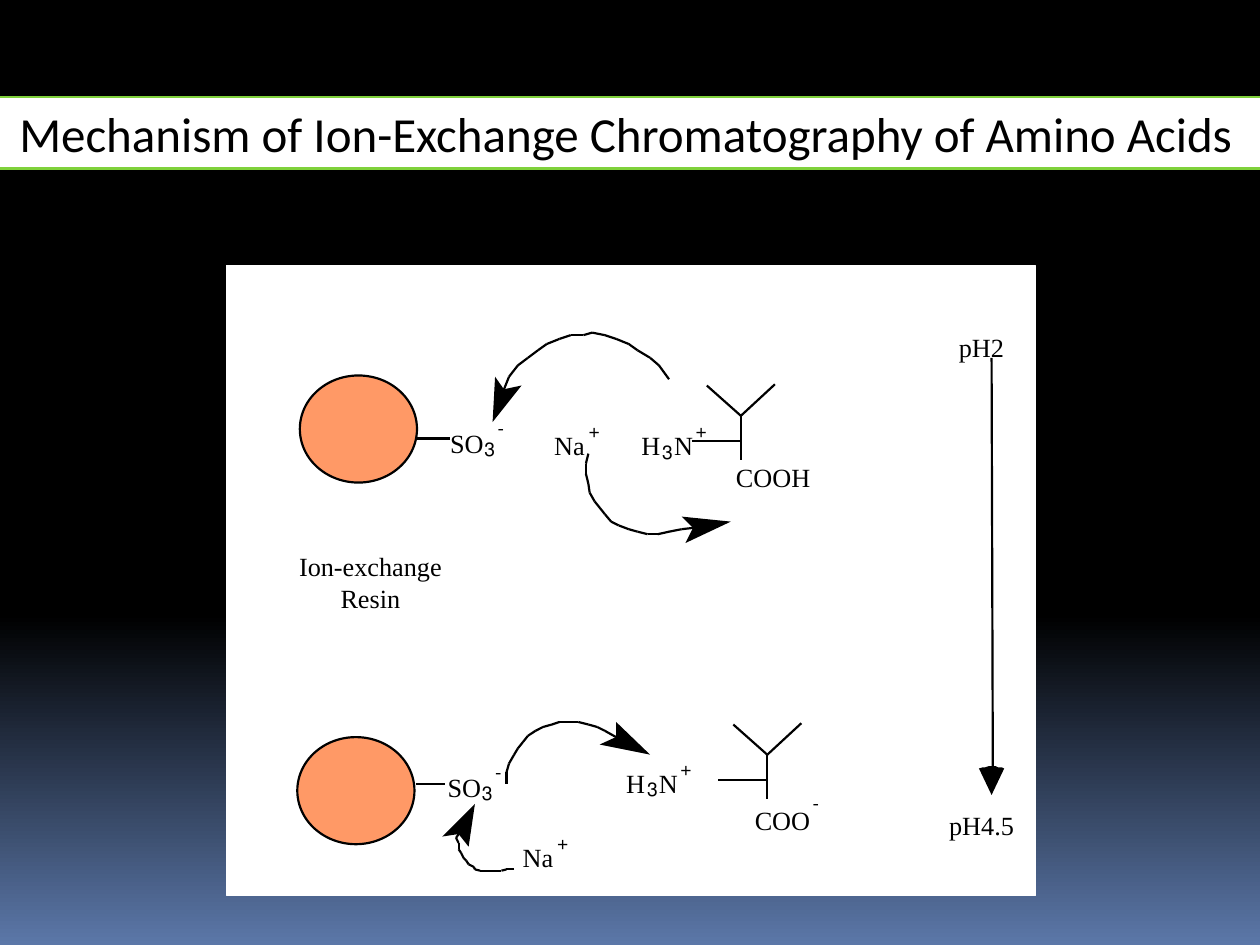
"""Build a slide on ion-exchange chromatography of amino acids."""
from itertools import chain
from lxml.etree import SubElement
from pptx import Presentation
from pptx.dml.color import RGBColor as Rgb
from pptx.enum.shapes import MSO_CONNECTOR as Connector, MSO_SHAPE as Preset
from pptx.enum.text import MSO_ANCHOR as Anchor, MSO_AUTO_SIZE as Fit, PP_ALIGN as Align
from pptx.oxml.ns import qn
from pptx.util import Inches, Pt

THEME = {
    "black": Rgb(0, 0, 0), "white": Rgb(255, 255, 255), "night": Rgb.from_string("5B77A8"),
    "green": Rgb.from_string("7FD13B"), "resin": Rgb.from_string("FF9966"),
    "title": {"name": "Calibri", "size": Pt(28)},
    "label": {"name": "Times New Roman", "size": Pt(15)},
    "script": {"name": "Times New Roman", "size": Pt(11)},
    "stroke": 1.25,
}

TITLE = "Mechanism of Ion-Exchange Chromatography of Amino Acids"
PANEL = (1.8, 2.11, 6.42, 5)
BANNER = (-0.12, 0.77, 10.17, 0.57)
BEADS = [(2.38, 2.98, 0.93, 0.85), (2.36, 5.85, 0.93, 0.85)]

FORMULAS = {
    "sulfonate": [("SO", 0, 0, 0.27), ("3", 0.28, 0.08, 0.08), ("-", 0.38, -0.09, 0.05)],
    "sodium": [("Na", -0.01, 0, 0.26), ("+", 0.27, -0.09, 0.09)],
    "ammonium": [("H", 0, 0, 0.15), ("3", 0.17, 0.08, 0.08), ("N", 0.26, 0, 0.15),
                 ("+", 0.43, -0.09, 0.09)],
    "acid": [("COOH", 0, 0, 0.59)],
    "carboxylate": [("COO", 0, 0, 0.44), ("-", 0.46, -0.1, 0.05)],
}
IONS = [
    ("sulfonate", 3.57, 3.39), ("sodium", 4.4, 3.41), ("ammonium", 5.09, 3.41),
    ("acid", 5.84, 3.66), ("sulfonate", 3.55, 6.12), ("sodium", 4.15, 6.68),
    ("ammonium", 4.97, 6.09), ("carboxylate", 5.99, 6.38),
]
CAPTIONS = [
    ("pH2", 7.61, 2.63, 0.36), ("pH4.5", 7.53, 6.42, 0.52),
    ("Ion-exchange\vResin", 2.37, 4.37, 1.14),
]

RESIN_BONDS = [(3.3, 3.48, 3.57, 3.48), (3.3, 6.22, 3.53, 6.22)]
CARBON_CENTRES = [(5.88, 3.3), (6.09, 5.99)]
CARBON_BONDS = [(0, 0, -0.27, -0.24), (0, 0, 0.27, -0.25), (0, 0, 0, 0.35),
                (-0.39, 0.2, -0.01, 0.2)]
PH_AXIS = (7.87, 2.84, 7.88, 6.2)

CURVES = [
    [(5.31, 3.01), (5.23, 2.9), (5.16, 2.84), (5.06, 2.78), (4.99, 2.73), (4.89, 2.69),
     (4.8, 2.66), (4.7, 2.64), (4.63, 2.66), (4.53, 2.66), (4.44, 2.69), (4.34, 2.73),
     (4.27, 2.78), (4.19, 2.84), (4.11, 2.9), (4.04, 2.99), (4, 3.09)],
    [(4.67, 3.6), (4.65, 3.68), (4.65, 3.76), (4.67, 3.84), (4.68, 3.91), (4.72, 3.98),
     (4.76, 4.03), (4.8, 4.08), (4.85, 4.14), (4.91, 4.17), (4.99, 4.2), (5.06, 4.22),
     (5.14, 4.24), (5.22, 4.24), (5.31, 4.22), (5.41, 4.2), (5.5, 4.19)],
    [(4.08, 6.9), (4.02, 6.9), (3.98, 6.91), (3.93, 6.91), (3.89, 6.91), (3.85, 6.91),
     (3.81, 6.91), (3.77, 6.9), (3.76, 6.88), (3.72, 6.86), (3.7, 6.83), (3.68, 6.81),
     (3.66, 6.77), (3.64, 6.74), (3.64, 6.69), (3.62, 6.65), (3.64, 6.62)],
    [(4.02, 6.22), (4.02, 6.13), (4.04, 6.06), (4.08, 5.99), (4.11, 5.94), (4.15, 5.89),
     (4.19, 5.84), (4.25, 5.8), (4.31, 5.77), (4.38, 5.75), (4.44, 5.73), (4.51, 5.73),
     (4.59, 5.73), (4.67, 5.75), (4.74, 5.77), (4.8, 5.8), (4.89, 5.85)],
]
ARROWHEADS = [
    [(3.91, 3.35), (3.93, 2.99), (4, 3.09), (4.14, 3.06)],
    [(5.8, 4.14), (5.44, 4.31), (5.5, 4.19), (5.41, 4.1)],
    [(3.77, 6.38), (3.72, 6.72), (3.64, 6.62), (3.51, 6.64)],
    [(5.16, 5.99), (4.76, 5.91), (4.89, 5.85), (4.89, 5.73)],
    [(7.77, 6.1), (7.8, 6.09), (7.82, 6.09), (7.85, 6.08), (7.87, 6.08), (7.9, 6.08),
     (7.92, 6.09), (7.95, 6.09), (7.97, 6.1), (7.87, 6.31)],
]


def style(shape, fill, line=None, width=THEME["stroke"]):
    shape.shadow.inherit = False
    shape.fill.solid()
    shape.fill.fore_color.rgb = fill
    if line is None:
        shape.line.fill.background()
    else:
        shape.line.color.rgb = line
        shape.line.width = Pt(width)


def add_preset(page, preset, place, **look):
    shape = page.shapes.add_shape(preset, *map(Inches, place))
    style(shape, **look)
    return shape


def write(box, text, font):
    frame = box.text_frame
    frame.text = text
    para = frame.paragraphs[0]
    para.alignment = Align.CENTER
    para._p.get_or_add_pPr().set("rtl", "1")
    for span in para.runs:
        span.font.color.rgb = THEME["black"]
        for name, value in font.items():
            setattr(span.font, name, value)


def add_label(page, text, left, top, width):
    small = text in "3+-"
    place = (left, top, width, 0.18 if small else 0.25)
    box = page.shapes.add_textbox(*map(Inches, place))
    layout = dict.fromkeys(("margin_left", "margin_top", "margin_right", "margin_bottom"), 0)
    layout.update(word_wrap=False, auto_size=Fit.SHAPE_TO_FIT_TEXT)
    for name, value in layout.items():
        setattr(box.text_frame, name, value)
    write(box, text, THEME["script" if small else "label"])


def add_line(page, ends):
    line = page.shapes.add_connector(Connector.STRAIGHT, *map(Inches, ends))
    line.line.color.rgb = THEME["black"]
    line.line.width = Pt(THEME["stroke"])
    SubElement(line._element.spPr, qn("a:effectLst"))


def add_arrowhead(page, points):
    start, *rest = [(Inches(x), Inches(y)) for x, y in points]
    builder = page.shapes.build_freeform(*start)
    builder.add_line_segments(rest, close=True)
    style(builder.convert_to_shape(), fill=THEME["black"])


def paint_background(page):
    fill = page.background.fill
    fill.gradient()
    fill.gradient_angle = 270
    for stop, position, color in zip(fill.gradient_stops, (0.65, 1), ("black", "night")):
        stop.position = position
        stop.color.rgb = THEME[color]


def main():
    deck = Presentation()
    deck.slide_width, deck.slide_height = Inches(10), Inches(7.5)
    page = deck.slides.add_slide(deck.slide_layouts[6])
    black, white = THEME["black"], THEME["white"]
    paint_background(page)

    add_preset(page, Preset.RECTANGLE, PANEL, fill=white, line=white, width=0.75)
    banner = add_preset(page, Preset.RECTANGLE, BANNER, fill=white, line=THEME["green"], width=1.5)
    banner.text_frame.word_wrap = True
    banner.text_frame.vertical_anchor = Anchor.MIDDLE
    write(banner, TITLE, THEME["title"])
    for place in BEADS:
        add_preset(page, Preset.OVAL, place, fill=THEME["resin"], line=black)

    ion_labels = [(text, left + dx, top + dy, width) for name, left, top in IONS
                  for text, dx, dy, width in FORMULAS[name]]
    for label in chain(ion_labels, CAPTIONS):
        add_label(page, *label)

    carbon_lines = [(x + x1, y + y1, x + x2, y + y2) for x, y in CARBON_CENTRES
                    for x1, y1, x2, y2 in CARBON_BONDS]
    curve_lines = [start + end for points in CURVES for start, end in zip(points, points[1:])]
    for ends in chain(RESIN_BONDS, carbon_lines, curve_lines, [PH_AXIS]):
        add_line(page, ends)
    for points in ARROWHEADS:
        add_arrowhead(page, points)

    deck.save("out.pptx")


if __name__ == "__main__":
    main()
